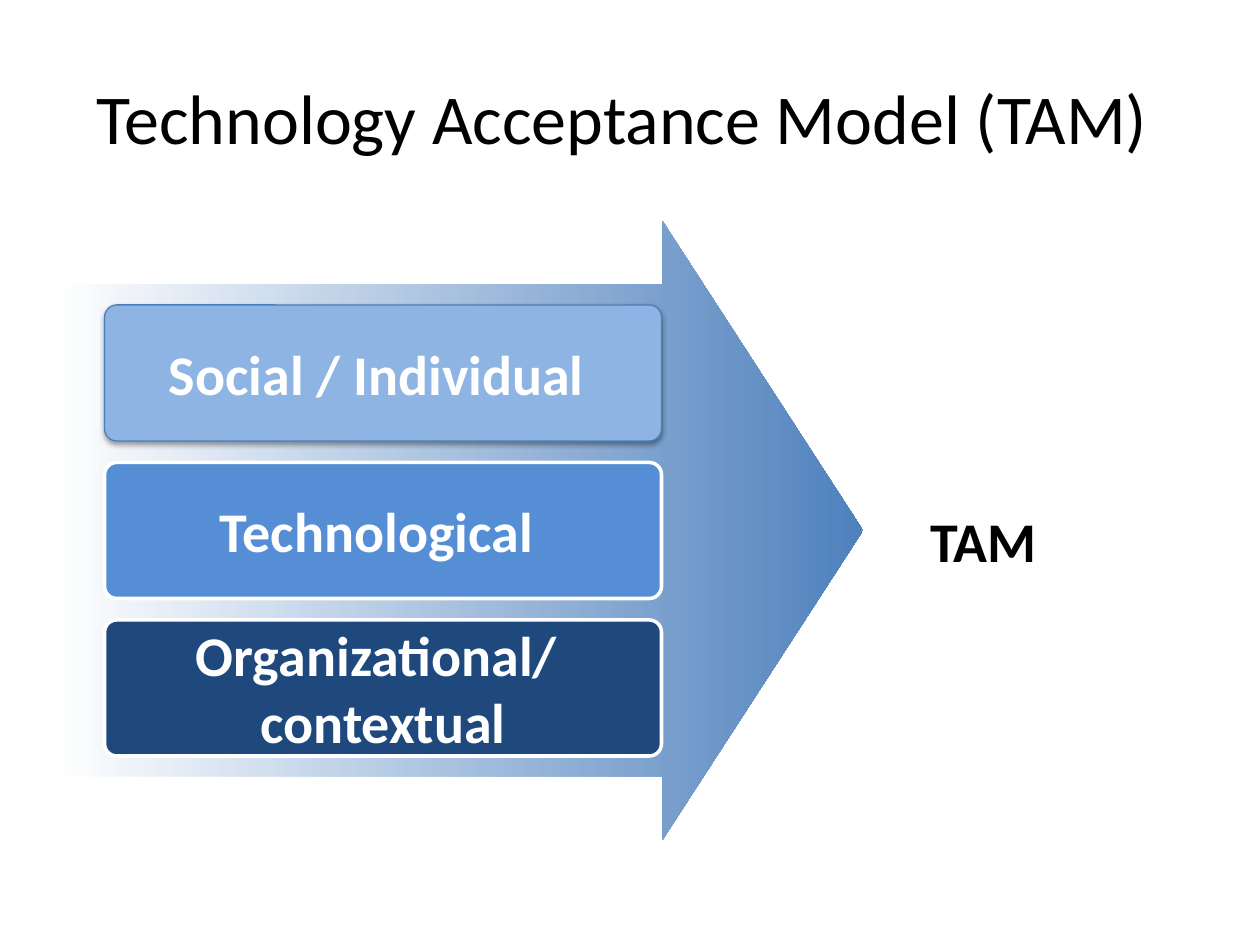
from dataclasses import dataclass
from typing import Optional

from lxml.etree import SubElement
from pptx import Presentation
from pptx.dml.color import RGBColor
from pptx.enum.shapes import MSO_SHAPE
from pptx.enum.text import MSO_ANCHOR, PP_ALIGN
from pptx.oxml.ns import qn
from pptx.shapes.autoshape import Shape
from pptx.slide import Slide
from pptx.util import Inches, Pt

BLACK = RGBColor(0x00, 0x00, 0x00)
WHITE = RGBColor(0xFF, 0xFF, 0xFF)
ARROW_BLUE = RGBColor(0x4F, 0x81, 0xBD)
EDGE_BLUE = RGBColor(0x4B, 0x7E, 0xBC)
LIGHT_BLUE = RGBColor(0x8E, 0xB4, 0xE3)
MEDIUM_BLUE = RGBColor(0x55, 0x8E, 0xD5)
DARK_BLUE = RGBColor(0x1F, 0x49, 0x7D)

LABEL_FORMAT = {"name": "Calibri", "size": Pt(32), "bold": True}
TITLE_FORMAT = {"name": "Calibri", "size": Pt(40), "bold": False}
FACTOR_TOP, FACTOR_PITCH = 2.42, 1.25
CORNER = 0.09


@dataclass(frozen=True)
class Factor:
    lines: tuple[str, ...]
    fill: RGBColor
    edge: RGBColor = WHITE
    edge_width: float = 2
    raised: bool = False


FACTORS = (
    Factor(("Social / Individual ",), LIGHT_BLUE, EDGE_BLUE, 0.75, True),
    Factor(("Technological ",), MEDIUM_BLUE),
    Factor(("Organizational/ ", "contextual"), DARK_BLUE),
)


def write_text(holder: Shape, lines: tuple[str, ...], font_format: dict,
               color: RGBColor, wrap: bool = True) -> None:
    frame = holder.text_frame
    frame.word_wrap = wrap
    frame.vertical_anchor = MSO_ANCHOR.MIDDLE
    frame.text = "\n".join(lines)
    for paragraph in frame.paragraphs:
        paragraph.alignment = PP_ALIGN.CENTER
        font = paragraph.runs[0].font
        font.color.rgb = color
        for attribute, value in font_format.items():
            setattr(font, attribute, value)


def add_soft_shadow(box: Shape) -> None:
    effects = box._element.spPr.find(qn("a:effectLst"))
    shadow = SubElement(effects, qn("a:outerShdw"), blurRad=str(Pt(3.1)),
                        dist=str(Pt(1.6)), dir="5400000", rotWithShape="0")
    tint = SubElement(shadow, qn("a:srgbClr"), val=str(BLACK))
    SubElement(tint, qn("a:alpha"), val="38000")


def add_rounded_box(slide: Slide, left: float, top: float, width: float,
                    height: float, fill: Optional[RGBColor] = None) -> Shape:
    box = slide.shapes.add_shape(MSO_SHAPE.ROUNDED_RECTANGLE, Inches(left),
                                 Inches(top), Inches(width), Inches(height))
    box.adjustments[0] = CORNER
    box.shadow.inherit = False
    if fill is None:
        box.fill.background()
        box.line.fill.background()
    else:
        box.fill.solid()
        box.fill.fore_color.rgb = fill
    return box


def add_arrow(slide: Slide) -> None:
    arrow = slide.shapes.add_shape(MSO_SHAPE.RIGHT_ARROW, Inches(0.42),
                                   Inches(1.75), Inches(6.43), Inches(4.92))
    arrow.adjustments[0] = 0.793
    arrow.adjustments[1] = 0.324
    arrow.shadow.inherit = False
    arrow.line.fill.background()
    arrow.fill.gradient()
    arrow.fill.gradient_angle = 0
    for stop, color in zip(arrow.fill.gradient_stops, (WHITE, ARROW_BLUE)):
        stop.color.rgb = color


def add_factor(slide: Slide, factor: Factor, top: float) -> None:
    box = add_rounded_box(slide, 0.83, top, 4.42, 1.08, factor.fill)
    box.line.color.rgb = factor.edge
    box.line.width = Pt(factor.edge_width)
    if factor.raised:
        add_soft_shadow(box)
    write_text(box, factor.lines, LABEL_FORMAT, WHITE, wrap=False)


def main() -> None:
    presentation = Presentation()
    presentation.slide_width = Inches(10)
    presentation.slide_height = Inches(7.5)
    slide = presentation.slides.add_slide(presentation.slide_layouts[6])

    title = slide.shapes.add_textbox(Inches(0.5), Inches(0.3), Inches(9), Inches(1.25))
    write_text(title, ("Technology Acceptance Model (TAM) ",), TITLE_FORMAT, BLACK)
    add_arrow(slide)
    for row, factor in enumerate(FACTORS):
        add_factor(slide, factor, FACTOR_TOP + row * FACTOR_PITCH)
    outcome = add_rounded_box(slide, 6.43, 3.58, 2.75, 1.42)
    write_text(outcome, ("TAM",), LABEL_FORMAT, BLACK)

    presentation.save("out.pptx")


if __name__ == "__main__":
    main()
